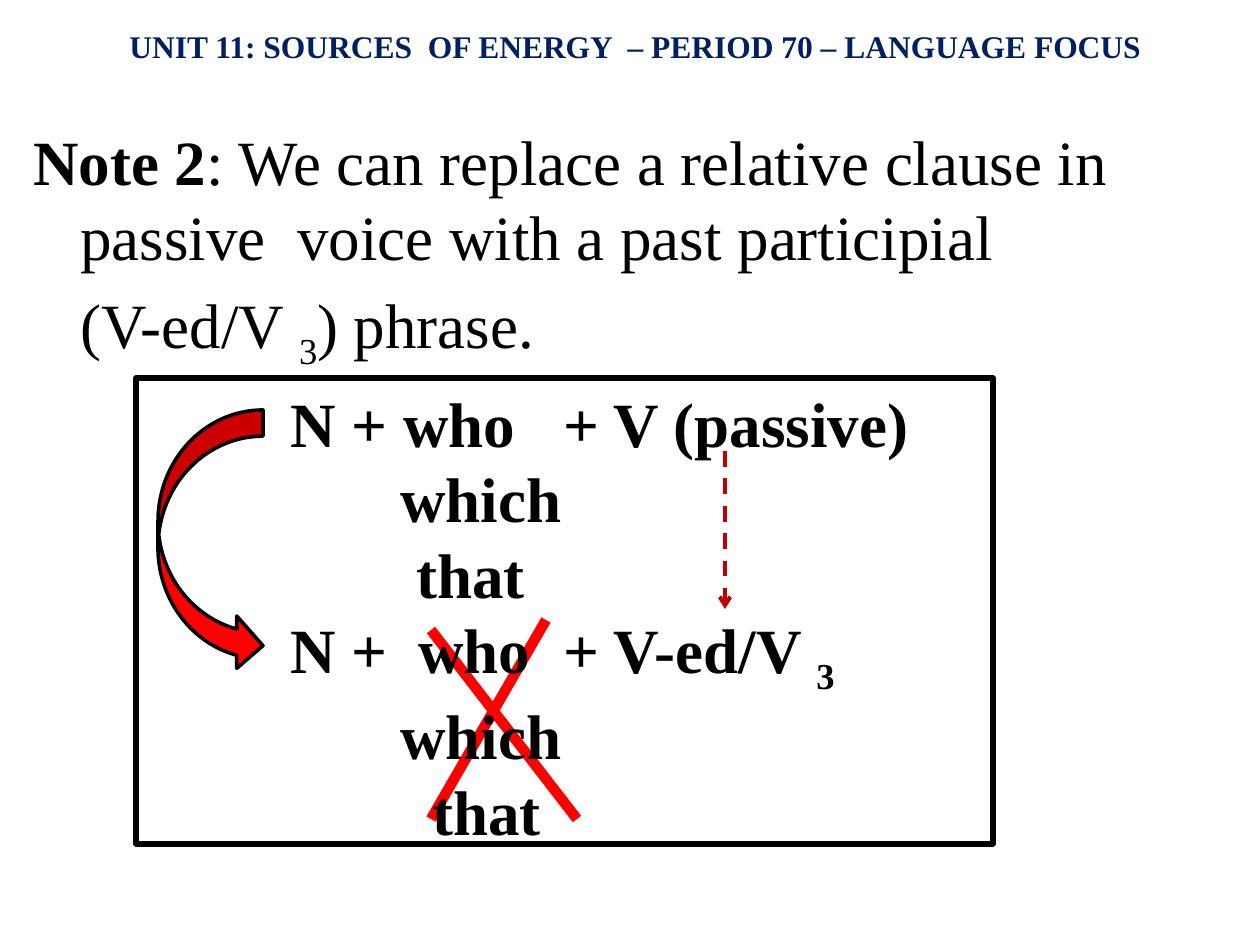
from lxml import etree
from pptx import Presentation
from pptx.dml.color import RGBColor
from pptx.enum.dml import MSO_LINE
from pptx.enum.shapes import MSO_CONNECTOR, MSO_SHAPE
from pptx.enum.text import MSO_ANCHOR, PP_ALIGN
from pptx.oxml.ns import qn
from pptx.util import Emu, Pt

RECT = MSO_SHAPE.RECTANGLE
CURVE = MSO_SHAPE.CURVED_RIGHT_ARROW
LINE = MSO_CONNECTOR.STRAIGHT
DASH = MSO_LINE.DASH
TOP = MSO_ANCHOR.TOP
LEFT = PP_ALIGN.LEFT
MID = PP_ALIGN.CENTER

FONT = "Times New Roman"
INK = {"black": "000000", "navy": "002060", "red": "FF0000", "dark": "C00000"}

ROWS = [
    ([142, 415], ["\tN + who\t+ V (passive)"]),
    ([252], ["\twhich"]),
    ([268], ["\tthat"]),
    ([142, 270, 415], ["\tN +\twho\t+ V-ed/V ", "3"]),
    ([252], ["\twhich"]),
    ([284], ["\tthat"]),
]


def px(n):
    return Emu(round(n * 914400 / 126))


def hue(name):
    return RGBColor.from_string(INK[name])


def style(para, size, ink="black", bold=None, align=LEFT):
    para.alignment = align
    font = para.font
    font.name, font.size, font.bold = FONT, Pt(size), bold
    font.color.rgb = hue(ink)


def put(para, text, sub=False, bold=None):
    run = para.add_run()
    run.text = text
    run.font.bold = bold
    if sub:
        run._r.get_or_add_rPr().set("baseline", "-25000")


def set_tabs(para, stops):
    props = para._p.get_or_add_pPr()
    tabs = etree.Element(qn("a:tabLst"))
    for stop in stops:
        etree.SubElement(tabs, qn("a:tab"), pos=str(px(stop)), algn="l")
    props.insert(0, tabs)


def add_title(slide, text):
    title = slide.shapes.title
    title.left, title.top, title.width, title.height = map(px, (32, 21, 1207, 50))
    frame = title.text_frame
    frame.vertical_anchor = TOP
    para = frame.paragraphs[0]
    put(para, text)
    style(para, 18, "navy", True, MID)


def add_note(slide):
    box = slide.shapes.add_textbox(*map(px, (21, 116, 1197, 252)))
    frame = box.text_frame
    frame.word_wrap = True
    first, last = frame.paragraphs[0], frame.add_paragraph()
    for para, hang in ((first, -47), (last, 0)):
        style(para, 36)
        para.space_before = Pt(7.2)
        props = para._p.get_or_add_pPr()
        props.set("marL", str(px(47)))
        props.set("indent", str(px(hang)))
    put(first, "Note 2", bold=True)
    put(first, ": We can replace a relative clause in passive  voice "
               "with a past participial")
    put(last, "(V-ed/V ")
    put(last, "3", sub=True)
    put(last, ") phrase.")


def add_line(slide, start, end, ink, width):
    line = slide.shapes.add_connector(LINE, *map(px, start + end))
    line.line.color.rgb = hue(ink)
    line.line.width = Pt(width)
    etree.SubElement(line._element.spPr, qn("a:effectLst"))
    return line


def add_arrow(slide, start, end):
    line = add_line(slide, start, end, "dark", 2.25).line
    line.dash_style = DASH
    etree.SubElement(line._get_or_add_ln(), qn("a:tailEnd"), type="arrow")


def add_form(slide, kind, place, width, fill=None):
    form = slide.shapes.add_shape(kind, *map(px, place))
    form.shadow.inherit = False
    if fill:
        form.fill.solid()
        form.fill.fore_color.rgb = hue(fill)
    else:
        form.fill.background()
    form.line.color.rgb = hue("black")
    form.line.width = Pt(width)
    return form


def add_rules(slide):
    frame = add_form(slide, RECT, (136, 378, 857, 466), 3).text_frame
    frame.word_wrap = True
    frame.vertical_anchor = TOP
    for i, (stops, parts) in enumerate(ROWS):
        para = frame.add_paragraph() if i else frame.paragraphs[0]
        style(para, 36, bold=True)
        set_tabs(para, stops)
        for j, part in enumerate(parts):
            put(para, part, sub=j > 0)


def main():
    deck = Presentation()
    deck.slide_width, deck.slide_height = px(1260), px(945)
    slide = deck.slides.add_slide(deck.slide_layouts[5])
    add_title(slide, "UNIT 11: SOURCES  OF ENERGY  – PERIOD 70 – LANGUAGE FOCUS")
    add_note(slide)
    add_line(slide, (431, 630), (577, 819), "red", 6)
    add_line(slide, (546, 620), (431, 819), "red", 6)
    add_arrow(slide, (725, 451), (725, 609))
    add_rules(slide)
    add_form(slide, CURVE, (158, 410, 105, 262), 2, "red")
    deck.save("out.pptx")


if __name__ == "__main__":
    main()
